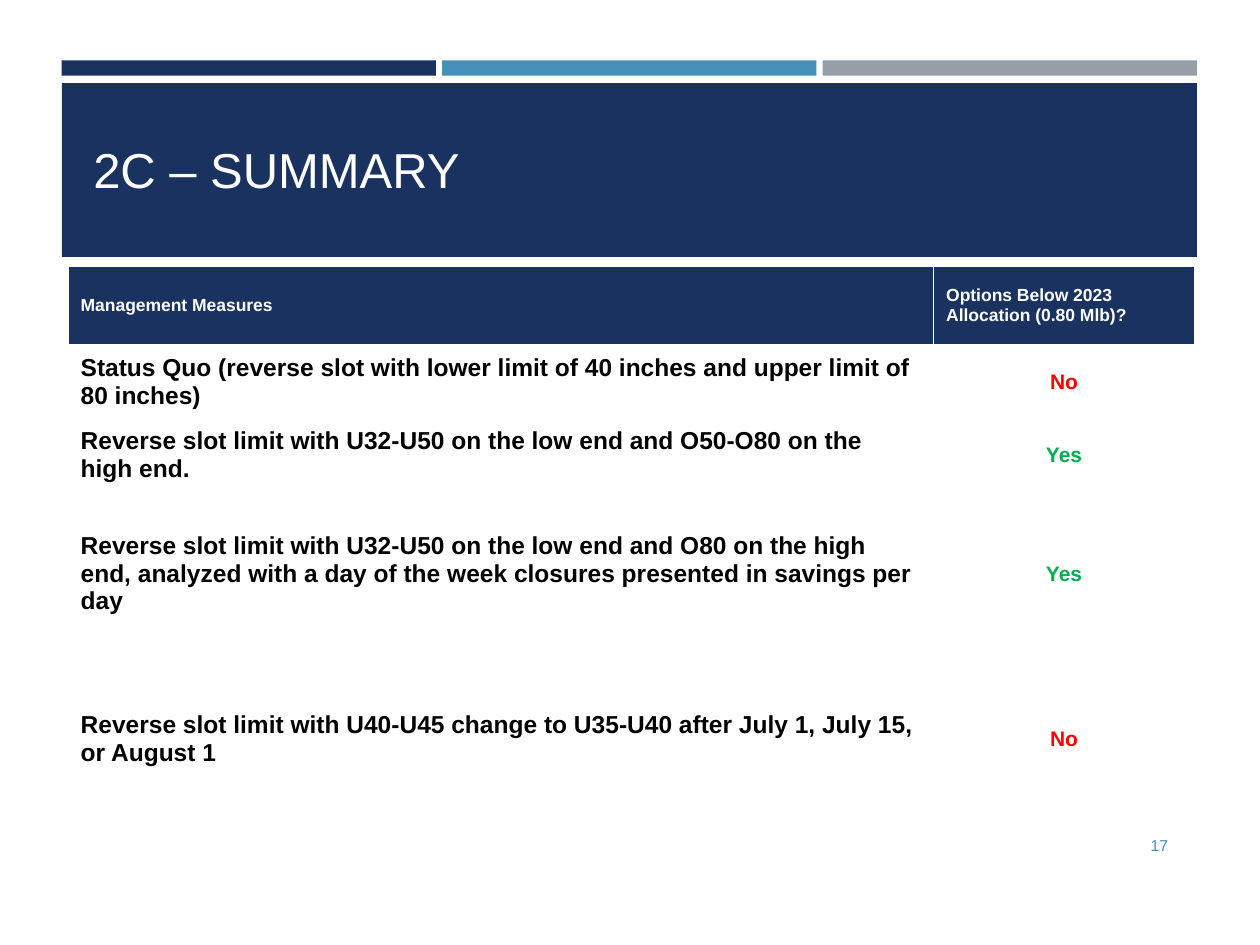
from dataclasses import dataclass

from pptx import Presentation
from pptx.dml.color import RGBColor
from pptx.enum.shapes import MSO_SHAPE
from pptx.enum.text import MSO_ANCHOR, PP_ALIGN
from pptx.util import Inches, Pt

RECTANGLE = MSO_SHAPE.RECTANGLE
MIDDLE = MSO_ANCHOR.MIDDLE
LEFT, CENTER, RIGHT = PP_ALIGN.LEFT, PP_ALIGN.CENTER, PP_ALIGN.RIGHT

TITLE = "2C – SUMMARY"
PAGE_NUMBER = "17"
HEADINGS = ("Management Measures", "Options Below 2023 Allocation (0.80 Mlb)?")
MEASURES = [
    ("Status Quo (reverse slot with lower limit of 40 inches and upper limit of 80 inches)", "No"),
    ("Reverse slot limit with U32-U50 on the low end and O50-O80 on the high end.", "Yes"),
    ("Reverse slot limit with U32-U50 on the low end and O80 on the high end, analyzed "
     "with a day of the week closures presented in savings per day", "Yes"),
    ("Reverse slot limit with U40-U45 change to U35-U40 after July 1, July 15, or August 1", "No"),
]


@dataclass(frozen=True)
class Theme:
    font: str = "Arial"
    navy: str = "1A3260"
    blue: str = "4590B8"
    gray: str = "969FA7"
    white: str = "FFFFFF"
    black: str = "000000"
    red: str = "FF0000"
    green: str = "00B050"
    title_size: int = 28
    measure_size: int = 14
    answer_size: int = 12
    heading_size: int = 10
    number_size: int = 9


THEME = Theme()
ANSWER_COLORS = {"No": THEME.red, "Yes": THEME.green}

SLIDE_SIZE = (10, 7.5)
BAND_LEFT, BAND_WIDTH = 0.49, 9.01
STRIPE_TOP, STRIPE_HEIGHT, STRIPE_GAP = 0.48, 0.12, 0.05
BAND_TOP, BAND_HEIGHT = 0.66, 1.38
TITLE_BOX = (0.64, 0.75, 8.74, 1.18)
NUMBER_BOX = (8.53, 6.51, 0.84, 0.4)
TABLE_LEFT, TABLE_TOP = 0.54, 2.11
COLUMN_WIDTHS = (6.87, 2.07)
ROW_HEIGHTS = (0.63, 0.58, 0.58, 1.31, 1.31)


def inches(box):
    return [Inches(length) for length in box]


def add_block(slide, box, color):
    block = slide.shapes.add_shape(RECTANGLE, *inches(box))
    block.shadow.inherit = False
    block.fill.solid()
    block.fill.fore_color.rgb = RGBColor.from_string(color)
    block.line.fill.background()


def write(frame, text, size, color, align=LEFT, bold=False):
    frame.text = text
    frame.word_wrap = True
    paragraph = frame.paragraphs[0]
    paragraph.alignment = align
    font = paragraph.runs[0].font
    font.name, font.size, font.bold = THEME.font, Pt(size), bold
    font.color.rgb = RGBColor.from_string(color)


def add_header(slide):
    stripes = (THEME.navy, THEME.blue, THEME.gray)
    width = (BAND_WIDTH - STRIPE_GAP * (len(stripes) - 1)) / len(stripes)
    for index, color in enumerate(stripes):
        left = BAND_LEFT + index * (width + STRIPE_GAP)
        add_block(slide, (left, STRIPE_TOP, width, STRIPE_HEIGHT), color)
    add_block(slide, (BAND_LEFT, BAND_TOP, BAND_WIDTH, BAND_HEIGHT), THEME.navy)

    title = slide.shapes.title
    title.left, title.top, title.width, title.height = inches(TITLE_BOX)
    write(title.text_frame, TITLE, THEME.title_size, THEME.white)
    title.text_frame.vertical_anchor = MIDDLE
    # The title must lie in front of the band.
    slide.shapes._spTree.append(title._element)


def add_measures(slide):
    box = (TABLE_LEFT, TABLE_TOP, sum(COLUMN_WIDTHS), sum(ROW_HEIGHTS))
    table = slide.shapes.add_table(len(ROW_HEIGHTS), len(COLUMN_WIDTHS), *inches(box)).table
    table.horz_banding = False
    for column, width in zip(table.columns, COLUMN_WIDTHS):
        column.width = Inches(width)
    for row, height in zip(table.rows, ROW_HEIGHTS):
        row.height = Inches(height)

    for column, heading in enumerate(HEADINGS):
        cell = table.cell(0, column)
        cell.fill.solid()
        cell.fill.fore_color.rgb = RGBColor.from_string(THEME.navy)
        write(cell.text_frame, heading, THEME.heading_size, THEME.white, bold=True)
    for row, (measure, answer) in enumerate(MEASURES, start=1):
        measure_cell, answer_cell = table.rows[row].cells
        write(measure_cell.text_frame, measure, THEME.measure_size, THEME.black, bold=True)
        write(answer_cell.text_frame, answer, THEME.answer_size,
              ANSWER_COLORS[answer], CENTER, bold=True)
        measure_cell.fill.background()
        answer_cell.fill.background()
    for cell in table.iter_cells():
        cell.vertical_anchor = MIDDLE


def add_page_number(slide):
    frame = slide.shapes.add_textbox(*inches(NUMBER_BOX)).text_frame
    write(frame, PAGE_NUMBER, THEME.number_size, THEME.blue, RIGHT)
    frame.vertical_anchor = MIDDLE


def main():
    deck = Presentation()
    deck.slide_width, deck.slide_height = inches(SLIDE_SIZE)
    slide = deck.slides.add_slide(deck.slide_layouts.get_by_name("Title Only"))
    add_header(slide)
    add_page_number(slide)
    add_measures(slide)
    deck.save("out.pptx")


if __name__ == "__main__":
    main()
